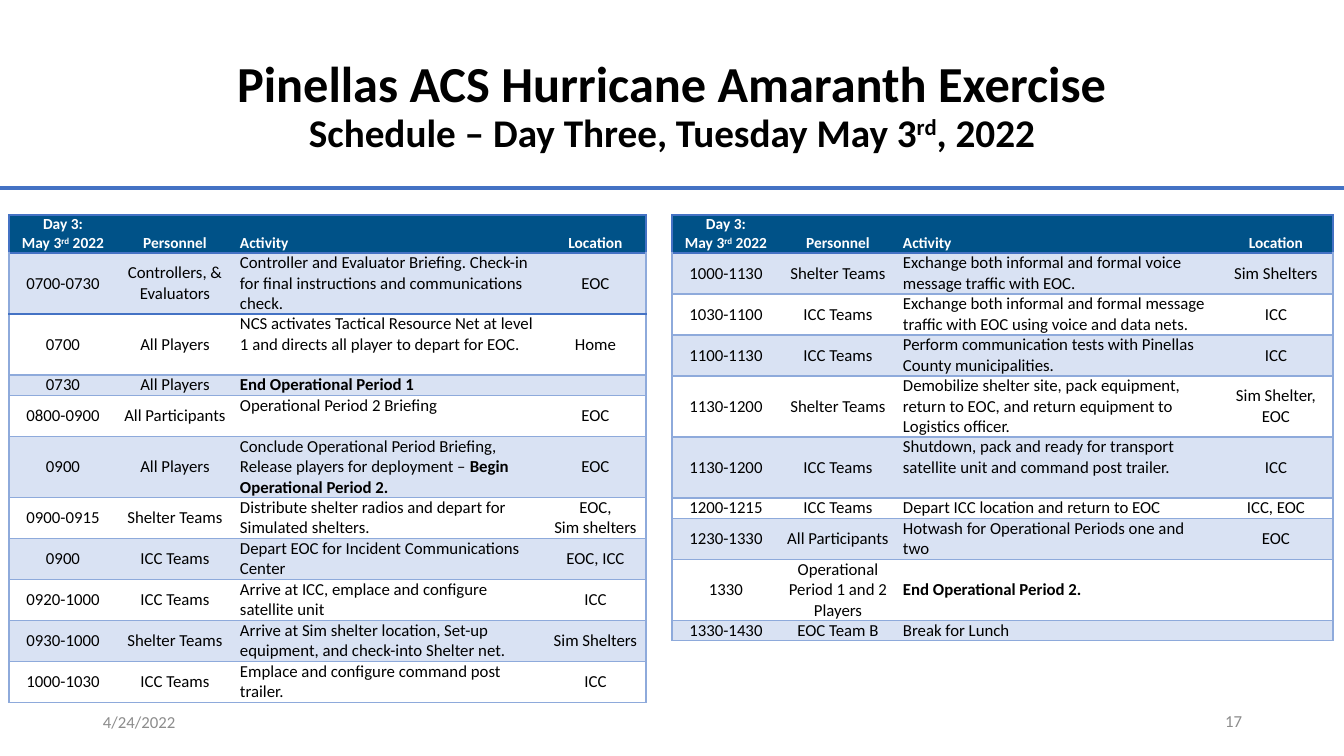
"""Build the day three schedule slide of the hurricane exercise."""
import lxml.etree
import pptx
import pptx.dml.color
import pptx.enum.shapes
import pptx.enum.text
import pptx.oxml.ns
import pptx.util

SCALE = 914400 / 100.8
FONT = "Calibri"
NAVY, BLUE, SKY, PALE = "005288", "4472C4", "8EAADB", "D9E2F3"
BLACK, WHITE, GREY = "000000", "FFFFFF", "8C8C8C"
PLAIN = "{2D5ABB26-0587-4C30-8999-92F81FD0307C}"
ALIGN = pptx.enum.text.PP_ALIGN
ANCHOR = pptx.enum.text.MSO_ANCHOR

HEAD = ("Day 3:\nMay 3|rd| 2022", "Personnel", "Activity", "Location")
EARLY = [
    (3, "0700-0730", "Controllers, & Evaluators",
     "Controller and Evaluator Briefing. Check-in for final instructions and communications check.", "EOC"),
    (3, "0700", "All Players",
     "NCS activates Tactical Resource Net at level 1 and directs all player to depart for EOC.", "Home"),
    (1, "0730", "All Players", "|End Operational Period 1|", ""),
    (2, "0800-0900", "All Participants", "Operational Period 2 Briefing", "EOC"),
    (3, "0900", "All Players",
     "Conclude Operational Period Briefing, Release players for deployment – |Begin Operational Period 2.|", "EOC"),
    (2, "0900-0915", "Shelter Teams",
     "Distribute shelter radios and depart for Simulated shelters.", "EOC,\nSim shelters"),
    (2, "0900", "ICC Teams", "Depart EOC for Incident Communications Center", "EOC, ICC"),
    (2, "0920-1000", "ICC Teams", "Arrive at ICC, emplace and configure satellite unit", "ICC"),
    (2, "0930-1000", "Shelter Teams",
     "Arrive at Sim shelter location, Set-up equipment, and check-into Shelter net.", "Sim Shelters"),
    (2, "1000-1030", "ICC Teams", "Emplace and configure command post trailer.", "ICC"),
]
LATE = [
    (2, "1000-1130", "Shelter Teams",
     "Exchange both informal and formal voice message traffic with EOC.", "Sim Shelters"),
    (2, "1030-1100", "ICC Teams",
     "Exchange both informal and formal message traffic with EOC using voice and data nets.", "ICC"),
    (2, "1100-1130", "ICC Teams", "Perform communication tests with Pinellas County municipalities.", "ICC"),
    (3, "1130-1200", "Shelter Teams",
     "Demobilize shelter site, pack equipment, return to EOC, and return equipment to Logistics officer.",
     "Sim Shelter, EOC"),
    (3, "1130-1200", "ICC Teams",
     "Shutdown, pack and ready for transport satellite unit and command post trailer.", "ICC"),
    (1, "1200-1215", "ICC Teams", "Depart ICC location and return to EOC", "ICC, EOC"),
    (2, "1230-1330", "All Participants", "Hotwash for Operational Periods one and two", "EOC"),
    (3, "1330", "Operational Period 1 and 2 Players", "|End Operational Period 2.|", ""),
    (1, "1330-1430", "EOC Team B", "Break for Lunch", ""),
]


def px(count):
    return pptx.util.Emu(round(count * SCALE))


def paint(color, code):
    color.rgb = pptx.dml.color.RGBColor.from_string(code)


def style(par, size, code, align, bold=False):
    par.alignment = align
    par.font.name = FONT
    par.font.size = pptx.util.Pt(size)
    par.font.bold = bold
    paint(par.font.color, code)


def write(par, text, mark):
    for order, piece in enumerate(text.split("|")):
        for count, line in enumerate(piece.split("\n")):
            if count:
                par.add_line_break()
            if line:
                run = par.add_run()
                run.text = line
                if order % 2:
                    mark(run)


def embolden(run):
    run.font.bold = True


def lift(run):
    run._r.get_or_add_rPr().set("baseline", "30000")


def add_text(slide, box, text, size, code, align, bold=False):
    shape = slide.shapes.add_textbox(*map(px, box))
    frame = shape.text_frame
    frame.word_wrap = True
    frame.vertical_anchor = ANCHOR.MIDDLE
    par = frame.paragraphs[0]
    style(par, size, code, align, bold)
    write(par, text, lift)
    return par


def add_rule(slide, top, width):
    rule = slide.shapes.add_connector(
        pptx.enum.shapes.MSO_CONNECTOR.STRAIGHT, 0, px(top), px(width), px(top))
    rule.line.width = pptx.util.Pt(3)
    paint(rule.line.color, BLUE)
    lxml.etree.SubElement(rule._element.spPr, pptx.oxml.ns.qn("a:effectLst"))


def edge(cell, side, code, width=1):
    qn = pptx.oxml.ns.qn
    line = lxml.etree.SubElement(cell._tc.get_or_add_tcPr(), qn("a:ln" + side))
    line.set("w", str(pptx.util.Pt(width)))
    fill = lxml.etree.SubElement(line, qn("a:solidFill"))
    lxml.etree.SubElement(fill, qn("a:srgbClr")).set("val", code)


def fill_cell(cell, text, row, col):
    head = row == 0
    cell.margin_left = cell.margin_right = px(7)
    cell.margin_top = cell.margin_bottom = 0
    if head:
        cell.vertical_anchor = ANCHOR.BOTTOM if col else ANCHOR.TOP
    else:
        top = col == 2 and not text.startswith("|")
        cell.vertical_anchor = ANCHOR.TOP if top else ANCHOR.MIDDLE
    par = cell.text_frame.paragraphs[0]
    size = 11 if head else 12
    style(par, size, WHITE if head else BLACK, ALIGN.LEFT if col == 2 else ALIGN.CENTER, head)
    write(par, text, lift if head else embolden)
    if not text:
        end = lxml.etree.SubElement(par._p, pptx.oxml.ns.qn("a:endParaRPr"))
        end.set("sz", str(size * 100))


def add_plan(slide, left, widths, plan, lines):
    """Lines holds (colour, width) of the rules that differ, by rule number."""
    heights = [38] + [entry[0] * 41 // 2 for entry in plan]
    frame = slide.shapes.add_table(
        len(heights), len(widths), px(left), px(215), px(sum(widths)), px(sum(heights)))
    table = frame.table
    table.first_row = table.horz_banding = False
    table._tbl.tblPr.find(pptx.oxml.ns.qn("a:tableStyleId")).text = PLAIN
    for column, width in zip(table.columns, widths):
        column.width = px(width)
    for row, texts in enumerate([HEAD] + [entry[1:] for entry in plan]):
        table.rows[row].height = px(heights[row])
        for col, text in enumerate(texts):
            cell = table.cell(row, col)
            fill_cell(cell, text, row, col)
            side = SKY if row else BLUE
            if col == 0:
                edge(cell, "L", side)
            if col == len(widths) - 1:
                edge(cell, "R", side)
            edge(cell, "T", *lines.get(row, (SKY, 1)))
            edge(cell, "B", *lines.get(row + 1, (SKY, 1)))
            if row % 2 or row == 0:
                cell.fill.solid()
                paint(cell.fill.fore_color, PALE if row else NAVY)
            else:
                cell.fill.background()


def main():
    deck = pptx.Presentation()
    deck.slide_width, deck.slide_height = px(1344), px(756)
    slide = deck.slides.add_slide(deck.slide_layouts[6])
    add_rule(slide, 188, 1344)
    title = add_text(
        slide, (177, 40, 990, 135),
        "Pinellas ACS Hurricane Amaranth Exercise\nSchedule – Day Three, Tuesday May 3|rd|, 2022",
        28, BLACK, ALIGN.CENTER, True)
    title.line_spacing = 0.9
    title.runs[0].font.size = pptx.util.Pt(36)
    add_plan(slide, 9, (108, 116, 312, 101), EARLY,
             {0: (BLUE, 1), 1: (BLUE, 1.5), 2: (BLUE, 1)})
    add_plan(slide, 672, (108, 116, 323, 114), LATE, {0: (BLUE, 1), 1: (BLUE, 1)})
    add_text(slide, (93, 702, 302, 40), "4/24/2022", 12, GREY, ALIGN.LEFT)
    add_text(slide, (950, 701, 302, 40), "17", 12, GREY, ALIGN.RIGHT)
    deck.save("out.pptx")


if __name__ == "__main__":
    main()
